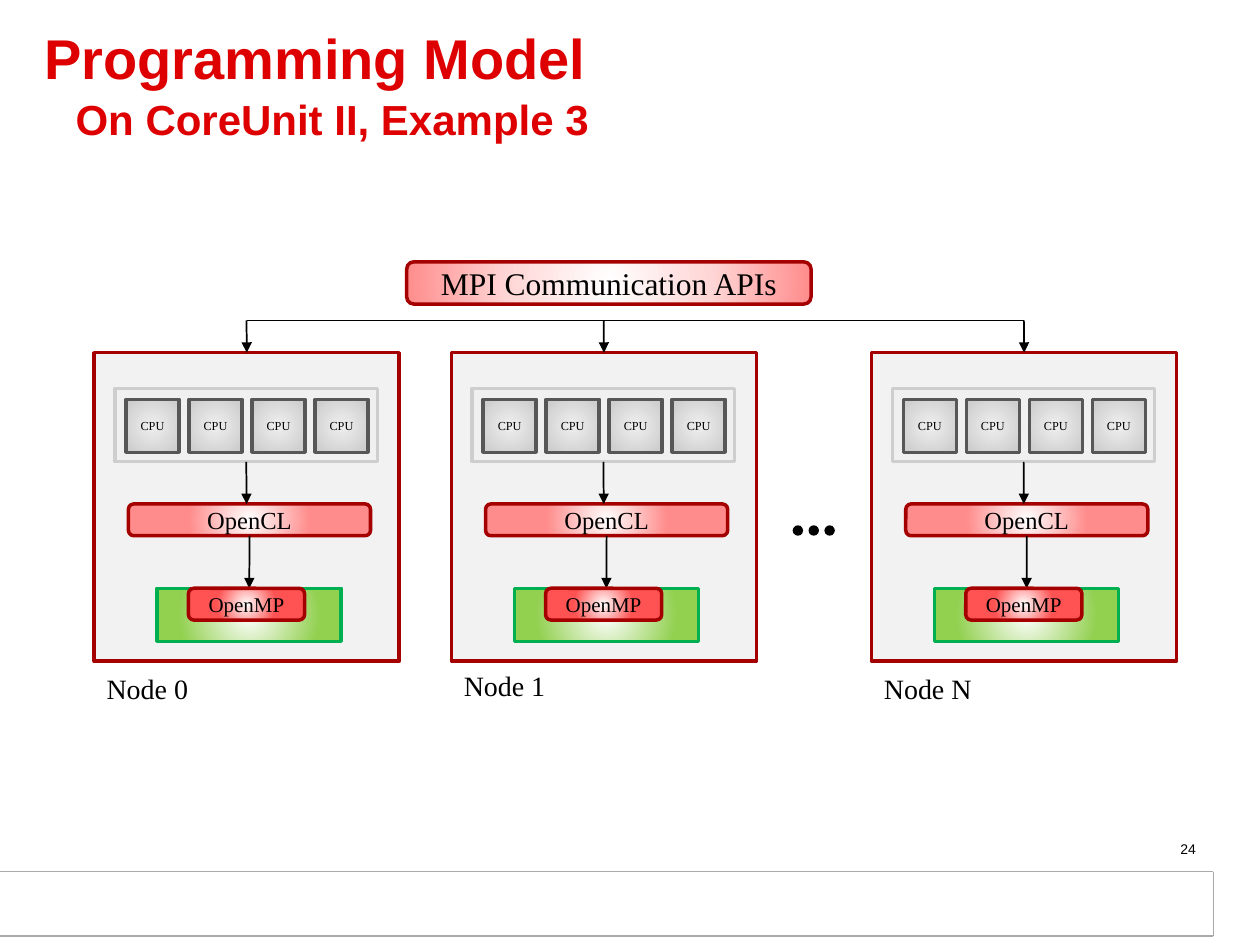
import pptx
import pptx.util
import pptx.dml.color
import pptx.enum.shapes
import pptx.enum.text
import pptx.oxml
import pptx.oxml.ns
from lxml import etree

Cm, Pt = pptx.util.Cm, pptx.util.Pt
SHAPE = pptx.enum.shapes.MSO_SHAPE
ALIGN = pptx.enum.text.PP_ALIGN
ANCHOR = pptx.enum.text.MSO_ANCHOR
qn = pptx.oxml.ns.qn

COLORS = {
    "title": "DE0000", "black": "000000", "white": "FFFFFF", "rule": "AAAAAA",
    "node": "F2F2F2", "red": "A40000", "panel": "EFEFEF", "silver": "CECECE",
    "steel": "575757", "lime": "92D050", "green": "00B050",
    "blush": "FFD6D6", "pink": "FF8C8C", "coral": "FF5252",
}
# Radial fills: (position in percent, colour) from the centre outwards
GLOWS = {
    "cpu": [(0, "panel"), (89, "silver"), (100, "silver")],
    "device": [(0, "white"), (74, "lime"), (100, "lime")],
    "opencl": [(0, "white"), (50, "pink"), (100, "pink")],
    "openmp": [(0, "white"), (50, "coral"), (100, "coral")],
    "mpi": [(0, "white"), (50, "blush"), (100, "pink")],
}


def rgb(name):
    return pptx.dml.color.RGBColor.from_string(COLORS[name])


class Deck:
    sans, serif = "Arial", "Times New Roman"

    def __init__(self, prs):
        self.s = prs.slides.add_slide(prs.slide_layouts[5])

    def style(self, p, size, font, color="black", align=ALIGN.LEFT, bold=False):
        p.alignment = align
        f = p.font
        f.size, f.name, f.bold = Pt(size), font, bold
        f.color.rgb = rgb(color)

    def title(self, x, y, w, h, main, sub):
        sp = self.s.shapes.title
        sp.left, sp.top, sp.width, sp.height = Cm(x), Cm(y), Cm(w), Cm(h)
        tf = sp.text_frame
        tf.auto_size = pptx.enum.text.MSO_AUTO_SIZE.NONE
        tf.vertical_anchor = ANCHOR.MIDDLE
        tf.text = main
        p = tf.add_paragraph()
        p.text = sub
        p.space_before = Pt(6)
        p._p.get_or_add_pPr().set("marL", str(Cm(0.63)))
        for p, size in zip(tf.paragraphs, (32, 24)):
            p.line_spacing = 0.85
            self.style(p, size, self.sans, "title", bold=True)

    def box(self, x, y, w, h, fill=None, line=None, glow=None, alpha=None,
            text="", size=12, kind=SHAPE.RECTANGLE):
        sp = self.s.shapes.add_shape(kind, Cm(x), Cm(y), Cm(w), Cm(h))
        sp.shadow.inherit = False
        if glow:
            self.radial(sp, GLOWS[glow])
        else:
            sp.fill.solid()
            sp.fill.fore_color.rgb = rgb(fill)
        if alpha:
            clr = sp._element.spPr.find(".//" + qn("a:srgbClr"))
            etree.SubElement(clr, qn("a:alpha")).set("val", str(alpha * 1000))
        if line:
            sp.line.color.rgb = rgb(line)
            sp.line.width = Pt(2)
        else:
            sp.line.fill.background()
        if text:
            tf = sp.text_frame
            tf.margin_left = tf.margin_right = tf.margin_top = tf.margin_bottom = 0
            tf.word_wrap = False
            tf.vertical_anchor = ANCHOR.MIDDLE
            tf.text = text
            self.style(tf.paragraphs[0], size, self.serif, align=ALIGN.CENTER)
        return sp

    def radial(self, sp, stops):
        grad = etree.Element(qn("a:gradFill"), rotWithShape="1")
        gs_list = etree.SubElement(grad, qn("a:gsLst"))
        for pos, color in stops:
            gs = etree.SubElement(gs_list, qn("a:gs"), pos=str(pos * 1000))
            etree.SubElement(gs, qn("a:srgbClr"), val=COLORS[color])
        path = etree.SubElement(grad, qn("a:path"), {"path": "circle"})
        etree.SubElement(path, qn("a:fillToRect"), {side: "50000" for side in "ltrb"})
        sp._element.spPr.find(qn("a:prstGeom")).addnext(grad)

    def line(self, x1, y1, x2, y2, color="black", width=1, arrow=False,
             begin=None, end=None):
        c = self.s.shapes.add_connector(
            pptx.enum.shapes.MSO_CONNECTOR.STRAIGHT, Cm(x1), Cm(y1), Cm(x2), Cm(y2))
        c.line.color.rgb = rgb(color)
        c.line.width = Pt(width)
        if arrow:
            etree.SubElement(c.line._get_or_add_ln(), qn("a:tailEnd"), type="triangle")
        etree.SubElement(c._element.spPr, qn("a:effectLst"))
        if begin:
            c.begin_connect(begin, 2)
        if end:
            c.end_connect(end, 0)

    def text(self, x, y, w, h, text, size, font, align=ALIGN.LEFT):
        tf = self.s.shapes.add_textbox(Cm(x), Cm(y), Cm(w), Cm(h)).text_frame
        tf.word_wrap = True
        tf.text = text
        self.style(tf.paragraphs[0], size, font, align=align)


def add_node(d, x, bus_y, name, label_y):
    rounded = SHAPE.ROUNDED_RECTANGLE
    mid = x + 3.07
    node = d.box(x, 7.11, 6.15, 6.22, "node", "red")
    panel = d.box(x + 0.42, 7.83, 5.29, 1.48, "panel", "silver", alpha=44)
    for i in range(4):
        d.box(x + 0.64 + 1.27 * i, 8.05, 1.07, 1.07, line="steel", glow="cpu",
              text="CPU", size=7)
    device = d.box(x + 1.27, 11.86, 3.71, 1.07, line="green", glow="device")
    opencl = d.box(x + 0.69, 10.16, 4.88, 0.64, line="red", glow="opencl",
                   text="OpenCL", size=14, kind=rounded)
    d.line(mid, bus_y, mid, 7.11, arrow=True, end=node)
    d.line(mid, 9.31, mid, 10.16, arrow=True, begin=panel)
    d.line(mid, 10.8, mid, 11.86, arrow=True, begin=opencl, end=device)
    d.box(x + 1.9, 11.86, 2.34, 0.64, line="red", glow="openmp",
          text="OpenMP", size=12, kind=rounded)
    d.text(x, label_y, 2.54, 0.94, name, 16, d.serif)


def main():
    prs = pptx.Presentation()
    prs.slide_width, prs.slide_height = Cm(25.4), Cm(19.05)
    d = Deck(prs)

    # Footer band
    left, right, top, bottom = -0.03, 24.46, 17.57, 18.87
    d.box(0.13, top, 24.28, 1.27, "white")
    for ends in ((left, bottom, right, bottom), (left, top, right, top),
                 (right, bottom, right, top)):
        d.line(*ends, color="rule", width=0.75)
    d.text(18.44, 16.81, 5.92, 0.58, "24", 8, d.sans, ALIGN.RIGHT)

    # Title
    d.title(0.64, 0.41, 23.5, 2.77, "Programming Model", "On CoreUnit II, Example 3")

    # MPI layer and its bus
    bus_y = 6.46
    d.box(8.2, 5.28, 8.15, 0.85, line="red", glow="mpi",
          text="MPI Communication APIs", size=18, kind=SHAPE.ROUNDED_RECTANGLE)
    d.line(4.98, bus_y, 20.65, bus_y)

    # Nodes
    for x, name, label_y in ((1.9, "Node 0", 13.41), (9.1, "Node 1", 13.36),
                             (17.57, "Node N", 13.41)):
        add_node(d, x, bus_y, name, label_y)

    # Ellipsis between the nodes
    for i in range(3):
        d.box(15.98 + 0.32 * i, 10.59, 0.21, 0.21, "black", kind=SHAPE.OVAL)

    prs.save("out.pptx")


if __name__ == "__main__":
    main()
